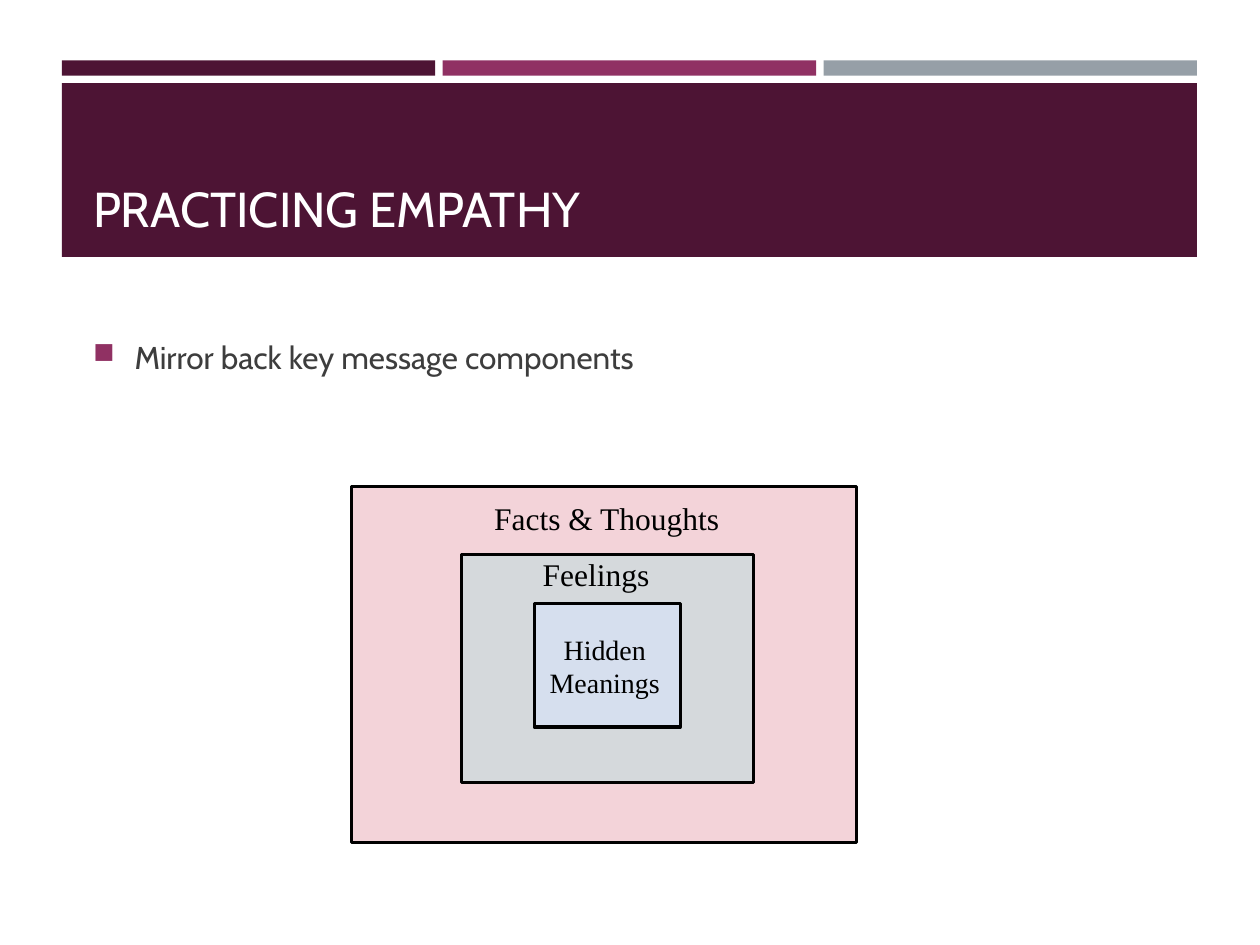
from lxml.etree import SubElement
from pptx import Presentation
from pptx.dml.color import RGBColor
from pptx.enum.shapes import MSO_SHAPE
from pptx.enum.text import MSO_ANCHOR, PP_ALIGN
from pptx.oxml.ns import qn
from pptx.util import Inches, Pt

TITLE = "PRACTICING EMPATHY"
POINT = "Mirror back key message components"
PLUM, MAGENTA, GREY, BLACK = "4D1434", "903163", "969FA7", "000000"
BANNER_LEFT, BANNER_WIDTH, BAR_GAP = 0.49, 9.01, 0.06
BAR_COLORS = [PLUM, MAGENTA, GREY]
LAYERS = [
    ((2.79, 3.86, 4.01, 2.83), "F3D3D9", (2.81, 3.91, 4.01, 0.4), 18, ["Facts & Thoughts"]),
    ((3.66, 4.4, 2.32, 1.81), "D5D9DC", (3.57, 4.36, 2.32, 0.4), 18, ["Feelings"]),
    ((4.24, 4.79, 1.16, 0.98), "D6DFEE", (4.22, 4.97, 1.16, 0.64), 16, ["Hidden", "Meanings"]),
]


def rgb(color):
    return RGBColor.from_string(color)


def add_box(slide, place, fill, outline=None):
    box = slide.shapes.add_shape(MSO_SHAPE.RECTANGLE, *map(Inches, place))
    box.shadow.inherit = False
    box.fill.solid()
    box.fill.fore_color.rgb = rgb(fill)
    if outline:
        box.line.color.rgb = rgb(outline)
        box.line.width = Pt(1.75)
    else:
        box.line.fill.background()


def add_text(slide, place, lines, size, font, color, anchor=MSO_ANCHOR.TOP, align=PP_ALIGN.LEFT):
    frame = slide.shapes.add_textbox(*map(Inches, place)).text_frame
    frame.word_wrap = True
    frame.vertical_anchor = anchor
    for index, line in enumerate(lines):
        paragraph = frame.paragraphs[0] if index == 0 else frame.add_paragraph()
        paragraph.alignment = align
        run = paragraph.add_run()
        run.text = line
        run.font.size = Pt(size)
        run.font.name = font
        run.font.color.rgb = rgb(color)
    return frame


def add_bullet(paragraph, color, indent):
    properties = paragraph._p.get_or_add_pPr()
    properties.set("marL", str(Inches(indent)))
    properties.set("indent", str(-Inches(indent)))
    bullet_color = SubElement(properties, qn("a:buClr"))
    SubElement(bullet_color, qn("a:srgbClr"), val=color)
    SubElement(properties, qn("a:buSzPct"), val="92000")
    SubElement(properties, qn("a:buChar"), char="■")


def main():
    deck = Presentation()
    deck.slide_width, deck.slide_height = Inches(10), Inches(7.5)
    slide = deck.slides.add_slide(deck.slide_layouts[6])

    bar_width = (BANNER_WIDTH - BAR_GAP * (len(BAR_COLORS) - 1)) / len(BAR_COLORS)
    for index, color in enumerate(BAR_COLORS):
        left = BANNER_LEFT + index * (bar_width + BAR_GAP)
        add_box(slide, (left, 0.48, bar_width, 0.12), color)
    add_box(slide, (BANNER_LEFT, 0.66, BANNER_WIDTH, 1.38), PLUM)

    add_text(slide, (0.64, 0.75, 8.74, 1.18), [TITLE], 28, "Cabin", "FFFFFF", MSO_ANCHOR.BOTTOM)
    body = add_text(slide, (0.64, 2.12, 8.74, 1.42), [POINT], 18, "Cabin", "3D3D3D", MSO_ANCHOR.MIDDLE)
    add_bullet(body.paragraphs[0], MAGENTA, 0.33)

    for place, fill, *_ in LAYERS:
        add_box(slide, place, fill, BLACK)
    for _, _, place, size, lines in LAYERS:
        add_text(slide, place, lines, size, "Times New Roman", BLACK, align=PP_ALIGN.CENTER)

    deck.save("out.pptx")


if __name__ == "__main__":
    main()
